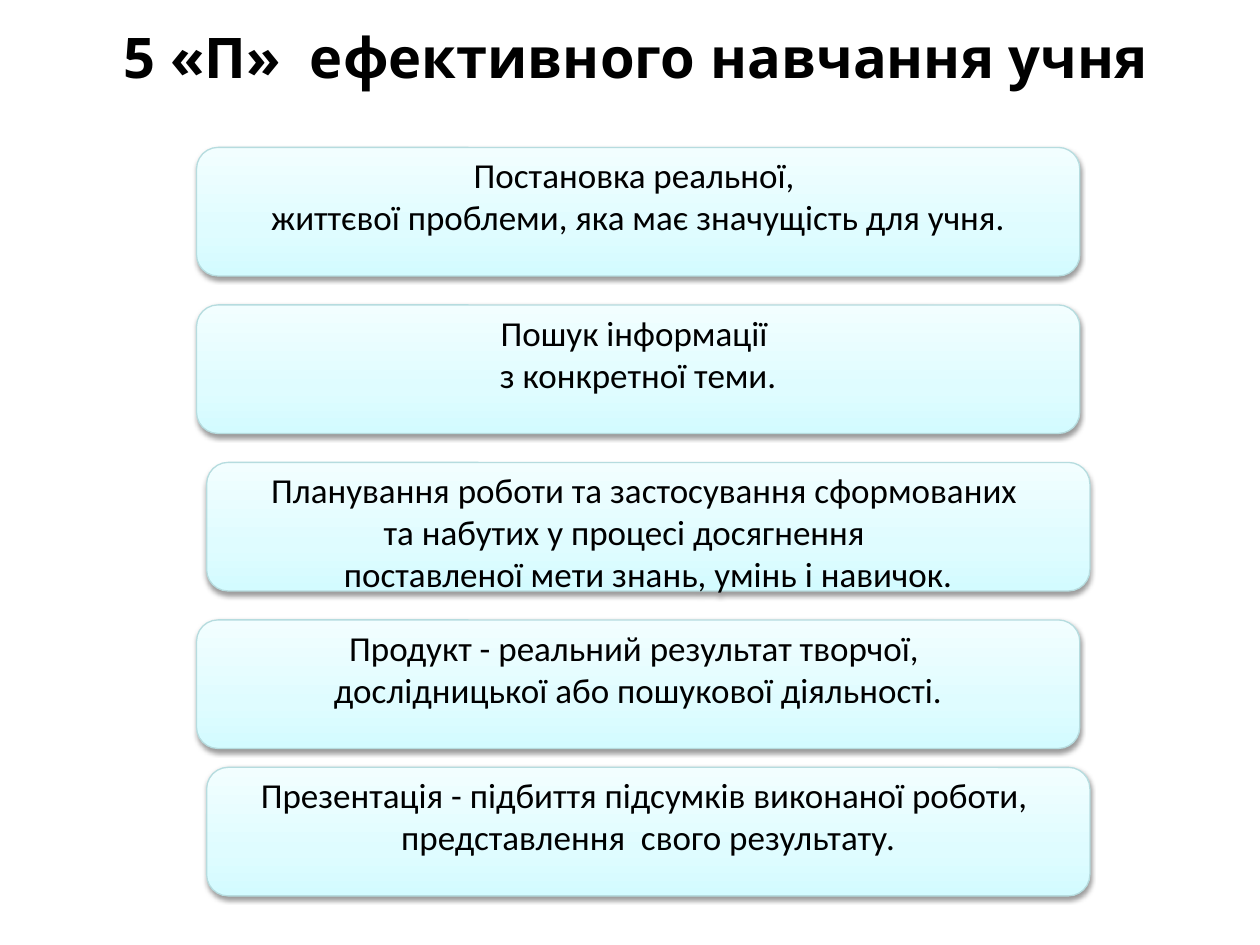
import copy

import pptx
import pptx.dml.color
import pptx.enum.shapes
import pptx.enum.text
import pptx.oxml
import pptx.oxml.ns
import pptx.util

Inches = pptx.util.Inches
Pt = pptx.util.Pt
RGBColor = pptx.dml.color.RGBColor
qn = pptx.oxml.ns.qn

BLACK = RGBColor(0x00, 0x00, 0x00)
EDGE = RGBColor(0xB6, 0xDC, 0xDF)
STOPS = [
    (0, RGBColor(0xD3, 0xFB, 0xFF)),
    (0.35, RGBColor(0xDF, 0xFC, 0xFF)),
    (1, RGBColor(0xF2, 0xFE, 0xFF)),
]
SHADOW = (
    '<a:effectLst xmlns:a="http://schemas.openxmlformats.org/drawingml/2006/main">'
    f'<a:outerShdw blurRad="{Pt(3.1)}" dist="{Pt(1.6)}" dir="5400000" rotWithShape="0">'
    '<a:srgbClr val="000000"><a:alpha val="38000"/></a:srgbClr>'
    '</a:outerShdw></a:effectLst>'
)

TITLE = "5 «П»  ефективного навчання учня"
WIDE, HIGH = 7.01, 1.02
LEFT, RIGHT = 1.56, 1.64
SHIFT = 0.38  # room on the right of a line that sits left of centre
# left, top, lines, index of the line set left of centre
STEPS = [
    (LEFT, 1.17, ["Постановка реальної, ",
                  "життєвої проблеми, яка має значущість для учня."], None),
    (LEFT, 2.42, ["Пошук інформації ", "з конкретної теми."], None),
    (RIGHT, 3.67, ["Планування роботи та застосування сформованих ",
                   "та набутих у процесі досягнення",
                   "поставленої мети знань, умінь і навичок."], 1),
    (LEFT, 4.92, ["Продукт - реальний результат творчої, ",
                  "дослідницької або пошукової діяльності."], None),
    (RIGHT, 6.09, ["Презентація - підбиття підсумків виконаної роботи, ",
                   "представлення  свого результату."], None),
]


def set_text(shape, lines, font, size, bold=False):
    frame = shape.text_frame
    frame.word_wrap = True
    frame.vertical_anchor = pptx.enum.text.MSO_ANCHOR.TOP
    frame.margin_top = frame.margin_bottom = 0
    frame.margin_left = frame.margin_right = 0
    frame.text = "\n".join(lines)
    for para in frame.paragraphs:
        para.alignment = pptx.enum.text.PP_ALIGN.CENTER
        for run in para.runs:
            run.font.name = font
            run.font.size = Pt(size)
            run.font.bold = bold
            run.font.color.rgb = BLACK


def add_title(slide, left, top, width, height):
    box = slide.shapes.add_textbox(
        Inches(left), Inches(top), Inches(width), Inches(height))
    set_text(box, [TITLE], "Noto Sans", 32, True)


def fill_card(card):
    """Give the card its upward gradient, edge and soft shadow."""
    card.fill.gradient()
    card.fill.gradient_angle = 90
    props = card._element.spPr
    stops = props.find(".//" + qn("a:gsLst"))
    stops.append(copy.deepcopy(stops[-1]))
    for stop, (place, color) in zip(card.fill.gradient_stops, STOPS):
        stop.position = place
        stop.color.rgb = color
    card.line.color.rgb = EDGE
    card.line.width = Pt(0.75)
    props.append(pptx.oxml.parse_xml(SHADOW))


def add_step(slide, left, top, width, height, lines, offset):
    card = slide.shapes.add_shape(
        pptx.enum.shapes.MSO_SHAPE.FLOWCHART_ALTERNATE_PROCESS,
        Inches(left), Inches(top), Inches(width), Inches(height))
    fill_card(card)
    set_text(card, lines, "Calibri", 20)
    if offset is not None:
        card.text_frame.margin_right = Inches(SHIFT)
        for index, para in enumerate(card.text_frame.paragraphs):
            if index != offset:
                para._p.get_or_add_pPr().set("marL", str(Inches(SHIFT)))


def main():
    deck = pptx.Presentation()
    deck.slide_width, deck.slide_height = Inches(10), Inches(7.5)
    slide = deck.slides.add_slide(deck.slide_layouts[6])
    add_title(slide, 0.55, 0.18, 9, 0.6)
    for left, top, lines, offset in STEPS:
        add_step(slide, left, top, WIDE, HIGH, lines, offset)
    deck.save("out.pptx")


if __name__ == "__main__":
    main()
